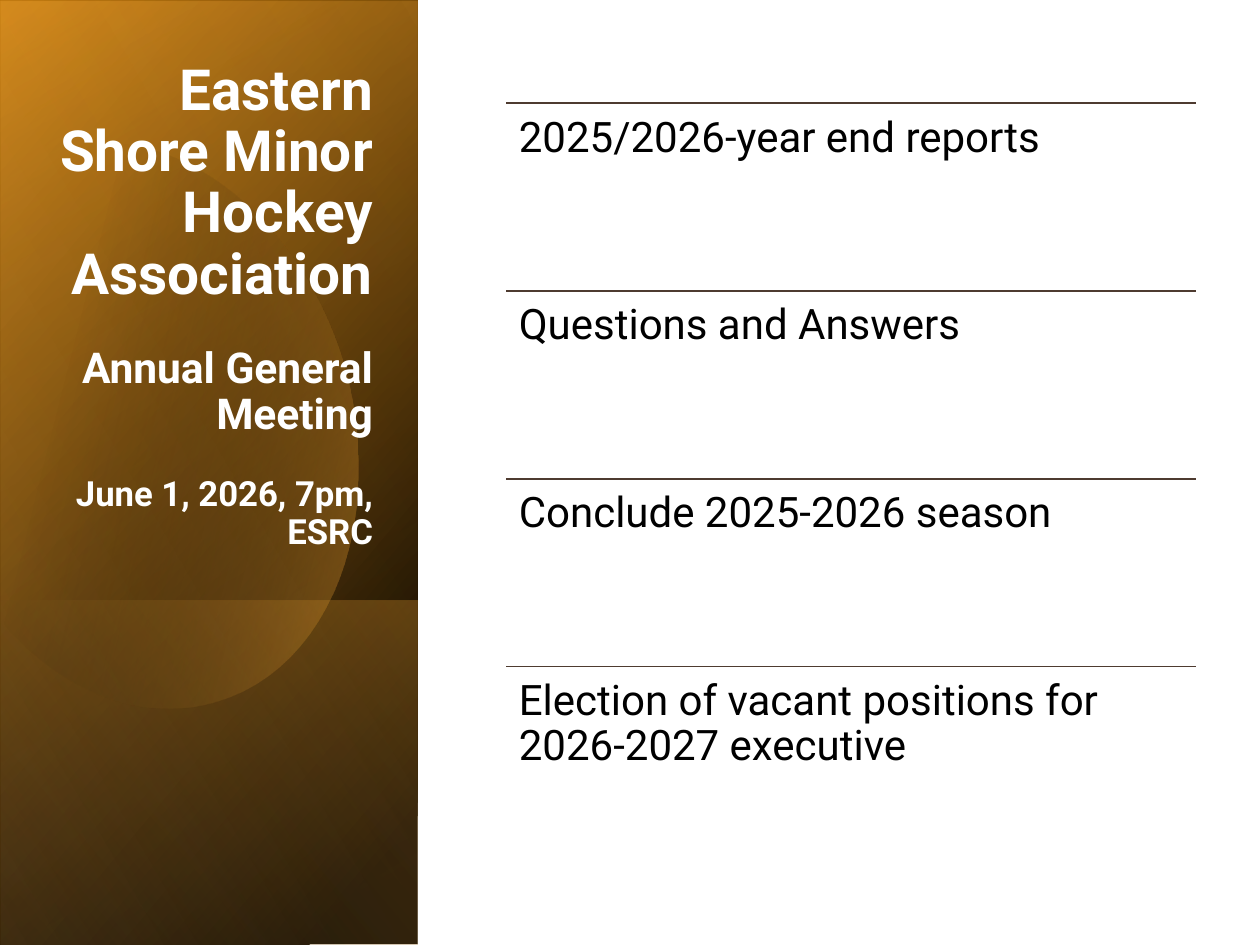
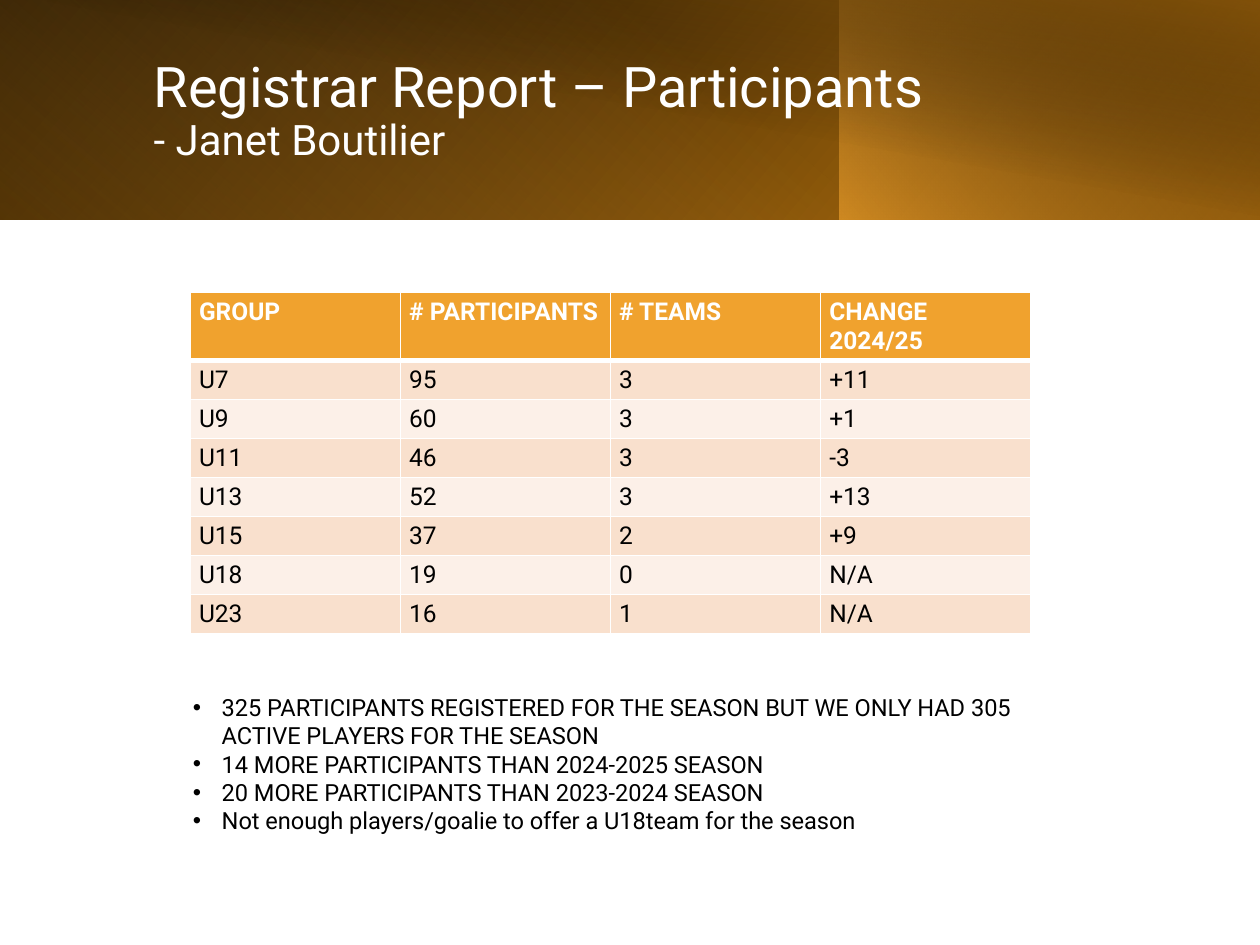
"""Build the two hockey association meeting slides: agenda and registrar report."""
from lxml import etree
from pptx import Presentation
from pptx.dml.color import RGBColor
from pptx.enum.shapes import MSO_CONNECTOR, MSO_SHAPE
from pptx.enum.text import MSO_ANCHOR, MSO_AUTO_SIZE, PP_ALIGN
from pptx.oxml import parse_xml
from pptx.oxml.ns import nsdecls, qn
from pptx.util import Inches, Pt

FONT = "Roboto"
C = {"black": "000000", "white": "FFFFFF", "gold": "F0A22E", "amber": "C87D0E",
     "pale": "F6C782", "bronze": "85540A", "rule": "4E3B30",
     "odd_row": "F9E0CD", "even_row": "FCF0E8"}

MEETING = [("Eastern Shore Minor Hockey Association", 32.4, 0),
           ("Annual General Meeting", 24.3, 23),
           ("June 1, 2026, 7pm, ESRC", 19.8, 22)]
AGENDA = ["2025/2026-year end reports", "Questions and Answers",
          "Conclude 2025-2026 season",
          "Election of vacant positions for 2026-2027 executive"]
REPORT_TITLE = [("Registrar Report – Participants", 32), ("- Janet Boutilier", 24)]
GROUPS = [("GROUP", "# PARTICIPANTS", "# TEAMS", "CHANGE 2024/25"),
          ("U7", "95", "3", "+11"), ("U9", "60", "3", "+1"),
          ("U11", "46", "3", "-3"), ("U13", "52", "3", "+13"),
          ("U15", "37", "2", "+9"), ("U18", "19", "0", "N/A"),
          ("U23", "16", "1", "N/A")]
NOTES = ["325 PARTICIPANTS REGISTERED FOR THE SEASON BUT WE ONLY HAD 305 ACTIVE PLAYERS FOR THE SEASON",
         "14 MORE PARTICIPANTS THAN 2024-2025 SEASON",
         "20 MORE PARTICIPANTS THAN 2023-2024 SEASON",
         "Not enough players/goalie to offer a U18team for the season"]

BASE = [(0, "black", 100), (100, "amber", 100)]
SIDE_BANDS = [
    ((-2.09, 2.09, 7.5, 3.31), 90, True, [(8, "black", 100), (100, "amber", 100)], 50),
    ((-2.09, 2.11, 7.5, 3.31), 90, True, [(0, "black", 0), (99, "gold", 46)], 30),
    ((0.29, 4.48, 2.74, 3.31), 90, True, [(2, "gold", 29), (100, "black", 30)], 130)]
SIDE_GLOW = ((-2.09, 2.09, 7.5, 3.31), 90, True, [(0, "black", 0), (99, "pale", 11)], 120)
TOP_BANDS = [
    ((0, 0, 10, 1.74), 0, True, BASE, 140),
    ((0, 0, 6.66, 1.74), 180, True, [(20, "gold", 0), (100, "bronze", 55)], 230),
    ((6.66, 0, 3.34, 1.74), 0, True, [(0, "gold", 66), (100, "black", 30)], 220),
    ((0.38, 0, 9.62, 1.75), 0, False, [(50, "black", 0), (99, "bronze", 52)], 280)]
OVAL_START = (0.96, 1.14)
OVAL_CURVES = [((1.71, 1.22), (2.44, 1.92), (2.73, 2.9)),
               ((3.07, 4.12), (2.62, 5.31), (1.71, 5.57)),
               ((1.14, 5.74), (0.53, 5.5), (0.07, 5)),
               ((-0.03, 4.88),), ((-0.25, 1.66),), ((-0.15, 1.54),),
               ((0.02, 1.37), (0.22, 1.25), (0.45, 1.18)),
               ((0.62, 1.13), (0.79, 1.12), (0.96, 1.14))]


def gradient(sp, stops, angle):
    """Give a shape a linear gradient with opacity per stop and no line."""
    gs = "".join(f'<a:gs pos="{pos * 1000}"><a:srgbClr val="{C[name]}">'
                 f'<a:alpha val="{alpha * 1000}"/></a:srgbClr></a:gs>'
                 for pos, name, alpha in stops)
    fill = parse_xml(f'<a:gradFill {nsdecls("a")} rotWithShape="1"><a:gsLst>{gs}</a:gsLst>'
                     f'<a:lin ang="{angle * 60000}" scaled="0"/></a:gradFill>')
    sp.shadow.inherit = False
    sp.line.fill.background()
    sp._element.spPr.find(qn("a:ln")).addprevious(fill)


def band(s, box, rotation, flip, stops, angle):
    sp = s.shapes.add_shape(MSO_SHAPE.RECTANGLE, *map(Inches, box))
    sp.rotation = rotation
    if flip:
        sp._element.spPr.xfrm.set("flipH", "1")
    gradient(sp, stops, angle)


def oval(s):
    points, start = [], OVAL_START
    for curve in OVAL_CURVES:
        end = curve[-1]
        if len(curve) == 1:
            points.append(end)
        else:
            for t in (i / 24 for i in range(1, 25)):
                weights = (1 - t) ** 3, 3 * t * (1 - t) ** 2, 3 * t * t * (1 - t), t ** 3
                points.append(tuple(sum(w * p[axis] for w, p in zip(weights, (start, *curve)))
                                    for axis in (0, 1)))
        start = end
    builder = s.shapes.build_freeform(*map(Inches, OVAL_START), scale=1.0)
    builder.add_line_segments([(Inches(x), Inches(y)) for x, y in points], close=True)
    gradient(builder.convert_to_shape(), [(29, "black", 0), (100, "gold", 43)], 14)


def write(tf, text, size, color="black", bold=False, align=PP_ALIGN.LEFT,
          line=1.0, before=0, bullet=False):
    """Add one formatted paragraph, filling the empty first one if there is one."""
    p = tf.paragraphs[0] if not tf.text else tf.add_paragraph()
    p.alignment, p.line_spacing = align, line
    p.space_before, p.space_after = Pt(before), Pt(0)
    if bullet:
        pPr = p._p.get_or_add_pPr()
        pPr.set("marL", str(Inches(0.23)))
        pPr.set("indent", str(Inches(-0.23)))
        etree.SubElement(pPr, qn("a:buFont")).set("typeface", "Arial")
        etree.SubElement(pPr, qn("a:buChar")).set("char", "•")
    r = p.add_run()
    r.text = text
    r.font.name, r.font.size, r.font.bold = FONT, Pt(size), bold
    r.font.color.rgb = RGBColor.from_string(C[color])


def frame(sp, box, anchor=MSO_ANCHOR.TOP, insets=(0.1, 0.05)):
    """Place a text shape in front of the others and return its text frame."""
    sp.left, sp.top, sp.width, sp.height = map(Inches, box)
    sp._element.getparent().append(sp._element)
    tf = sp.text_frame
    tf.word_wrap, tf.auto_size, tf.vertical_anchor = True, MSO_AUTO_SIZE.NONE, anchor
    tf.margin_left = tf.margin_right = Inches(insets[0])
    tf.margin_top = tf.margin_bottom = Inches(insets[1])
    return tf


def border(cell, bottom):
    tcPr = cell._tc.get_or_add_tcPr()
    for i, (side, width) in enumerate((("L", 1), ("R", 1), ("T", 1), ("B", bottom))):
        tcPr.insert(i, parse_xml(
            f'<a:ln{side} {nsdecls("a")} w="{Pt(width)}"><a:solidFill>'
            f'<a:srgbClr val="{C["white"]}"/></a:solidFill></a:ln{side}>'))


def agenda_slide(prs):
    s = prs.slides.add_slide(prs.slide_layouts[5])
    for spec in SIDE_BANDS:
        band(s, *spec)
    oval(s)
    band(s, *SIDE_GLOW)
    tf = frame(s.shapes.title, (0.25, 0.45, 2.81, 3.98), MSO_ANCHOR.BOTTOM)
    for text, size, before in MEETING:
        write(tf, text, size, "white", bold=True, align=PP_ALIGN.RIGHT, line=0.9, before=before)
    left, top, width, step = 4.02, 0.82, 5.47, 1.49
    for i, item in enumerate(AGENDA):
        y = top + i * step
        rule = s.shapes.add_connector(MSO_CONNECTOR.STRAIGHT, Inches(left), Inches(y),
                                      Inches(left + width), Inches(y))
        rule.line.color.rgb, rule.line.width = RGBColor.from_string(C["rule"]), Pt(1)
        etree.SubElement(rule._element.spPr, qn("a:effectLst"))
        box = (left, y, width, step)
        sp = s.shapes.add_textbox(*map(Inches, box))
        write(frame(sp, box, insets=(0.1, 0.1)), item, 24, line=0.9)


def report_slide(prs):
    s = prs.slides.add_slide(prs.slide_layouts[1])
    for spec in TOP_BANDS:
        band(s, *spec)
    tf = frame(s.shapes.title, (1.12, 0.32, 8.12, 1.13), MSO_ANCHOR.MIDDLE)
    for text, size in REPORT_TITLE:
        write(tf, text, size, "white", line=0.9)
    rows, cols = len(GROUPS), len(GROUPS[0])
    table = s.shapes.add_table(rows, cols, Inches(1.51), Inches(2.32),
                               Inches(6.67), Inches(2.66)).table
    for i, values in enumerate(GROUPS):
        header = i == 0
        table.rows[i].height = Inches(0.52 if header else 0.3)
        fill = "gold" if header else "odd_row" if i % 2 else "even_row"
        for j, value in enumerate(values):
            cell = table.cell(i, j)
            cell.margin_left = cell.margin_right = Inches(0.07)
            cell.margin_top = cell.margin_bottom = Inches(0.04)
            cell.fill.solid()
            cell.fill.fore_color.rgb = RGBColor.from_string(C[fill])
            border(cell, 3 if header else 1)
            write(cell.text_frame, value, 14, "white" if header else "black", bold=header)
    tf = frame(s.placeholders[1], (1.46, 5.46, 6.67, 1.21), insets=(0.07, 0.04))
    for note in NOTES:
        write(tf, note, 13.5, bullet=True)


def main():
    prs = Presentation()
    prs.slide_width, prs.slide_height = Inches(10), Inches(7.5)
    agenda_slide(prs)
    report_slide(prs)
    prs.save("out.pptx")


if __name__ == "__main__":
    main()
